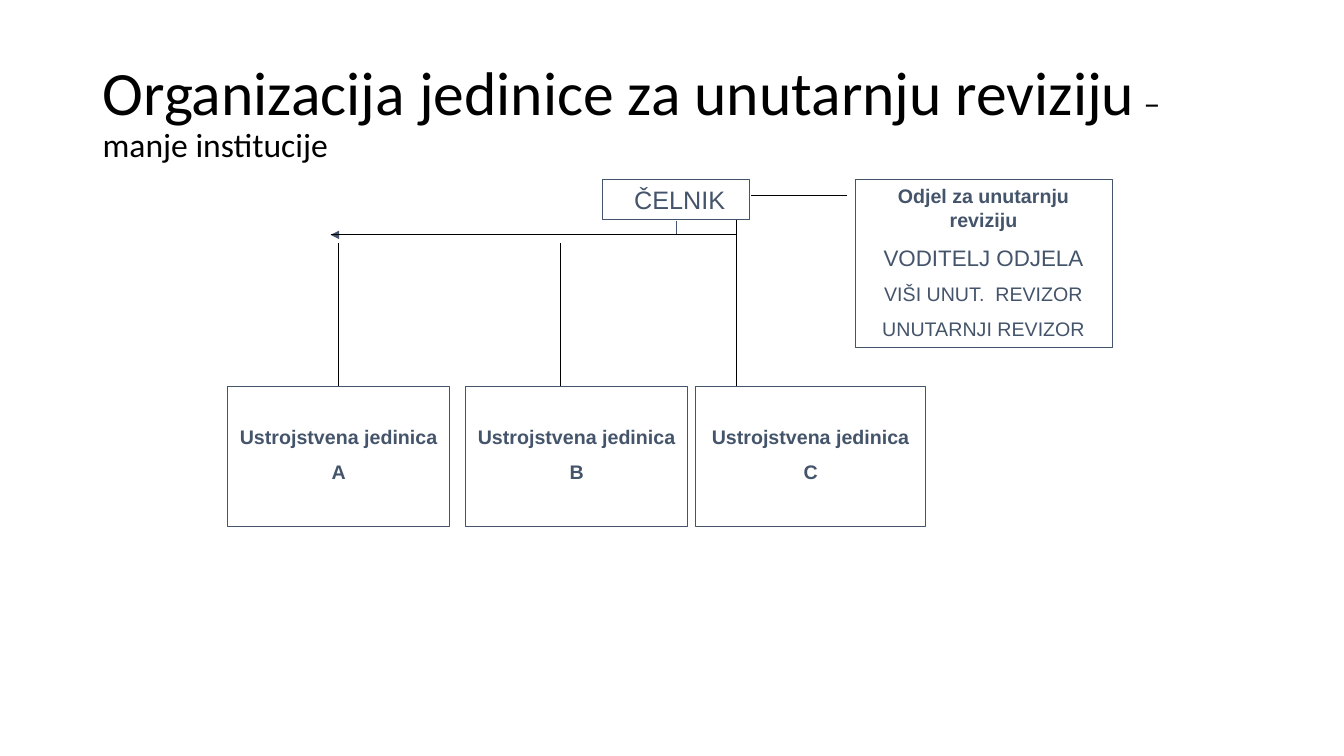
from lxml.etree import SubElement
from pptx import Presentation
from pptx.dml.color import RGBColor
from pptx.enum.shapes import MSO_CONNECTOR as Link, MSO_SHAPE as Shape
from pptx.enum.text import MSO_ANCHOR as Anchor, PP_ALIGN as Align
from pptx.oxml.ns import qn
from pptx.util import Inches, Pt

BLACK = RGBColor(0x00, 0x00, 0x00)
SLATE = RGBColor(0x44, 0x54, 0x6A)


def add_run(para, text, size, font, color, bold=False):
    run = para.add_run()
    run.text = text
    run.font.size = Pt(size)
    run.font.name = font
    run.font.bold = bold
    run.font.color.rgb = color


def add_title(slide, parts):
    box = slide.shapes.add_textbox(
        Inches(0.92), Inches(0.4), Inches(11.5), Inches(1.45))
    frame = box.text_frame
    frame.word_wrap = True
    frame.vertical_anchor = Anchor.MIDDLE
    para = frame.paragraphs[0]
    para.line_spacing = 0.9
    for text, size in parts:
        add_run(para, text, size, "Calibri", BLACK)


def add_box(slide, place, lines, weight=0.5, align=Align.CENTER,
            left=0.1, top=0.05):
    """Outlined box; each line is (text, size, bold), insets in inches."""
    box = slide.shapes.add_shape(Shape.RECTANGLE, *map(Inches, place))
    box.shadow.inherit = False
    box.fill.background()
    box.line.color.rgb = SLATE
    box.line.width = Pt(weight)
    frame = box.text_frame
    frame.word_wrap = True
    frame.vertical_anchor = Anchor.TOP
    frame.margin_left, frame.margin_top = Inches(left), Inches(top)
    for i, (text, size, bold) in enumerate(lines):
        para = frame.add_paragraph() if i else frame.paragraphs[0]
        para.alignment = align
        if i:
            para.space_before = Pt(round(size * 0.57))
        add_run(para, text, size, "Arial", SLATE, bold)


def add_line(slide, start, end, color=BLACK, kind=Link.STRAIGHT):
    line = slide.shapes.add_connector(
        kind, *map(Inches, start), *map(Inches, end))
    line.line.color.rgb = color
    line.line.width = Pt(0.75)
    SubElement(line.element.spPr, qn("a:effectLst"))
    return line


def add_elbow(slide, start, end):
    """Arrow that runs down from start, then left to end."""
    (x1, y1), (x2, y2) = start, end
    mid_x, mid_y = (x1 + x2) / 2, (y1 + y2) / 2
    # The frame is turned by 90 degrees, so its sides swap.
    half_w, half_h = (y2 - y1) / 2, (x1 - x2) / 2
    elbow = add_line(slide, (mid_x - half_w, mid_y - half_h),
                     (mid_x + half_w, mid_y + half_h), SLATE, Link.ELBOW)
    props = elbow.element.spPr
    props.find(qn("a:xfrm")).set("rot", "5400000")
    props.find(qn("a:prstGeom")).set("prst", "bentConnector2")
    SubElement(props.find(qn("a:ln")), qn("a:tailEnd"), type="triangle")


def main():
    deck = Presentation()
    deck.slide_width, deck.slide_height = Inches(13.33), Inches(7.5)
    slide = deck.slides.add_slide(deck.slide_layouts[6])

    add_title(slide, [("Organizacija jedinice za unutarnju reviziju", 44),
                      (" – manje institucije", 24)])
    add_box(slide, (5.98, 1.78, 1.45, 0.4), [("ČELNIK", 18, False)],
            weight=0.75, align=Align.LEFT, left=0.31)
    add_elbow(slide, (6.71, 2.19), (3.28, 2.33))
    add_line(slide, (7.45, 1.94), (8.4, 1.94))
    add_box(slide, (8.48, 1.78, 2.55, 1.67), [
        ("Odjel za unutarnju reviziju", 14, True),
        ("VODITELJ ODJELA", 16, False),
        ("VIŠI UNUT.  REVIZOR", 14, False),
        ("UNUTARNJI REVIZOR", 14, False),
    ])

    units = [("A", 2.26, 2.2, 3.36, 2.41),
             ("B", 4.62, 2.2, 5.56, 2.41),
             ("C", 6.9, 2.28, 7.3, 2.18)]
    for name, left, width, stem_x, stem_top in units:
        add_box(slide, (left, 3.83, width, 1.39),
                [("Ustrojstvena jedinica", 14, True), (name, 14, True)],
                top=0.39)
        add_line(slide, (stem_x, 3.83), (stem_x, stem_top))
    add_line(slide, (3.28, 2.33), (7.3, 2.33))

    deck.save("out.pptx")


if __name__ == "__main__":
    main()
